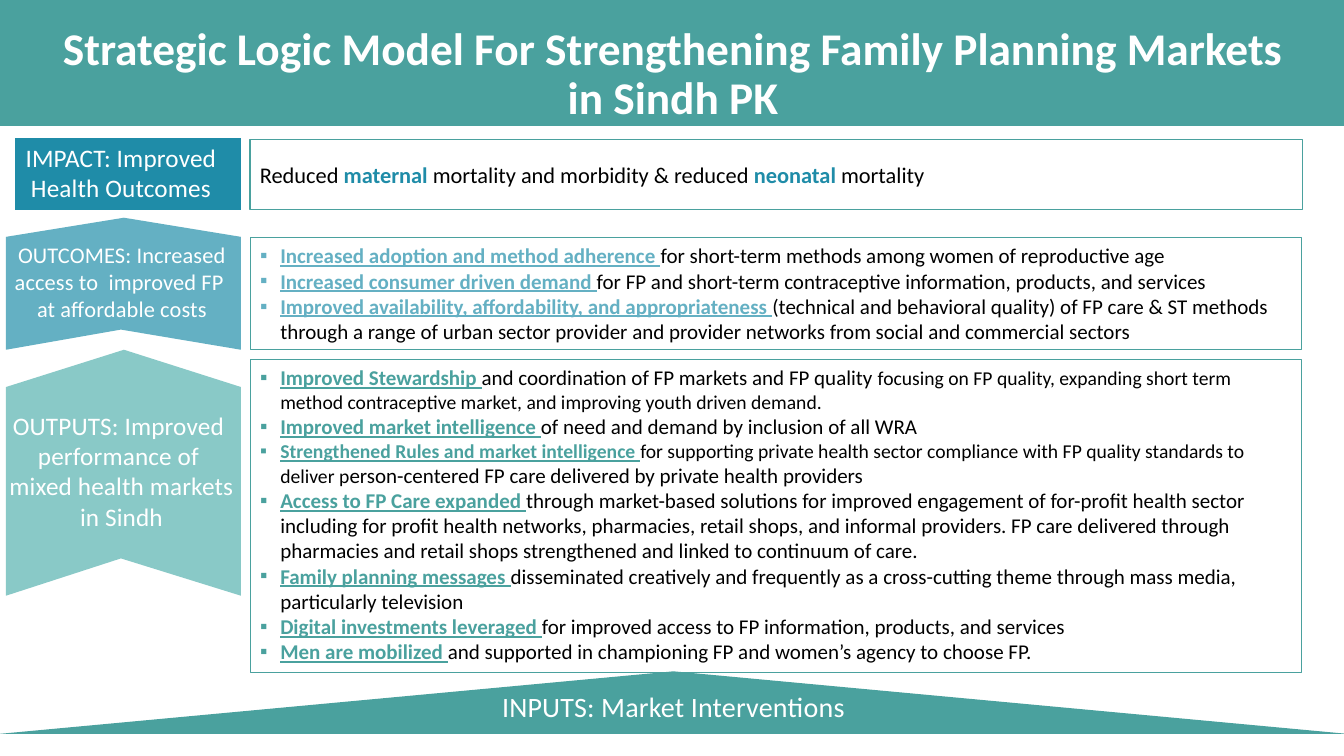
"""Build a one-page logic model for family planning markets."""
from dataclasses import dataclass

from lxml import etree
from pptx import Presentation
from pptx.dml.color import RGBColor
from pptx.enum.shapes import MSO_SHAPE
from pptx.enum.text import MSO_ANCHOR, MSO_AUTO_SIZE, PP_ALIGN
from pptx.oxml.ns import qn
from pptx.util import Inches, Pt

RECTANGLE = MSO_SHAPE.RECTANGLE
TOP, MIDDLE = MSO_ANCHOR.TOP, MSO_ANCHOR.MIDDLE
LEFT, CENTER = PP_ALIGN.LEFT, PP_ALIGN.CENTER
FIXED = MSO_AUTO_SIZE.NONE


@dataclass(frozen=True)
class Theme:
    """Hold the colours, font and type sizes of the page."""
    font: str = "Calibri"
    white: str = "FFFFFF"
    black: str = "000000"
    teal: str = "4AA19E"
    impact: str = "1F8CA8"
    outcomes: str = "64B0C3"
    outputs: str = "89C9C7"
    title: float = 32.4
    inputs: float = 20
    label: float = 18
    body: float = 16
    item: float = 15
    small: float = 14


THEME = Theme()

IMPACT = [("Reduced ", False), ("maternal ", True),
          ("mortality and morbidity & reduced ", False), ("neonatal ", True),
          ("mortality", False)]

OUTCOMES = [
    [("Increased adoption and method adherence ", THEME.item),
     ("for short-term methods among women of reproductive age", THEME.item)],
    [("Increased consumer driven demand ", THEME.item),
     ("for FP and short-term contraceptive information, products, and services", THEME.item)],
    [("Improved availability, affordability, and appropriateness ", THEME.item),
     ("(technical and behavioral quality) of FP care & ST methods through a range of urban "
      "sector provider and provider networks from social and commercial sectors", THEME.item)],
]

OUTPUTS = [
    [("Improved Stewardship ", THEME.item),
     ("and coordination of FP markets and FP quality ", THEME.item),
     ("focusing on FP quality, expanding short term method contraceptive market, "
      "and improving youth driven demand.", THEME.small)],
    [("Improved market intelligence ", THEME.item),
     ("of need and demand by inclusion of all WRA", THEME.item)],
    [("Strengthened Rules and market intelligence ", THEME.small),
     ("for supporting private health sector compliance with FP quality standards "
      "to deliver p", THEME.small),
     ("erson-centered FP care delivered by private health providers", THEME.item)],
    [("Access to FP Care expanded ", THEME.item),
     ("through market-based solutions for improved engagement of for-profit health sector "
      "including for profit health networks, pharmacies, retail shops, and informal providers. "
      "FP care delivered through pharmacies and retail shops strengthened and linked to "
      "continuum of care.", THEME.item)],
    [("Family planning messages ", THEME.item),
     ("disseminated creatively and frequently as a cross-cutting theme through mass media, "
      "particularly television", THEME.item)],
    [("Digital investments leveraged ", THEME.item),
     ("for improved access to FP information, products, and services", THEME.item)],
    [("Men are mobilized ", THEME.item),
     ("and supported in championing FP and women’s agency to choose FP.", THEME.item)],
]


def write_span(para, text, *, size, color=THEME.black, bold=False, underline=False, spacing=0):
    """Add formatted text to a paragraph."""
    span = para.add_run()
    span.text = text
    font = span.font
    font.name, font.size = THEME.font, Pt(size)
    font.bold, font.underline = bold, underline
    font.color.rgb = RGBColor.from_string(color)
    if spacing:
        span._r.get_or_add_rPr().set("spc", str(round(spacing * 100)))


def place(shape, left, top, width, height):
    """Move and size a shape, in inches."""
    shape.left, shape.top = Inches(left), Inches(top)
    shape.width, shape.height = Inches(width), Inches(height)


def set_frame(frame, anchor):
    """Make a text frame wrap at a fixed size."""
    frame.word_wrap = True
    frame.auto_size = FIXED
    frame.vertical_anchor = anchor


def paint(shape, color):
    """Give a shape a plain fill without line or shadow."""
    shape.shadow.inherit = False
    shape.fill.solid()
    shape.fill.fore_color.rgb = RGBColor.from_string(color)
    shape.line.fill.background()


def outline(shape):
    """Give a shape a thin teal frame and no fill."""
    shape.fill.background()
    shape.line.color.rgb = RGBColor.from_string(THEME.teal)
    shape.line.width = Pt(0.75)


def add_header(page, text):
    """Put the title on a full-width band."""
    band = page.shapes.add_shape(RECTANGLE, 0, 0, Inches(13.33), Inches(1.25))
    paint(band, THEME.teal)
    page.shapes.element.insert(2, band.element)
    title = page.shapes.title
    place(title, 0.51, 0.33, 12.33, 0.84)
    set_frame(title.text_frame, MIDDLE)
    para = title.text_frame.paragraphs[0]
    para.alignment, para.line_spacing = CENTER, 0.9
    write_span(para, text, size=THEME.title, color=THEME.white, bold=True)


def add_polygon(page, points, color):
    """Draw a filled outline through points given in inches."""
    start, *others = [(Inches(x), Inches(y)) for x, y in points]
    builder = page.shapes.build_freeform(*start)
    builder.add_line_segments(others)
    paint(builder.convert_to_shape(), color)


def add_chevron(page, top, shoulder, notch, bottom, color):
    """Draw an upward chevron in the left column."""
    left, right = 0.06, 2.39
    add_polygon(page, [(1.23, top), (left, shoulder), (left, bottom), (1.2, notch),
                       (right, bottom), (right, shoulder)], color)


def add_label(page, text, area, size, inset=0.01):
    """Add a centred white label."""
    box = page.shapes.add_textbox(*map(Inches, area))
    frame = box.text_frame
    set_frame(frame, TOP)
    frame.margin_left = frame.margin_right = frame.margin_bottom = 0
    frame.margin_top = Inches(inset)
    para = frame.paragraphs[0]
    para.alignment = CENTER
    write_span(para, text, size=size, color=THEME.white, spacing=0.1)


def add_statement(page, spans, area):
    """Add a framed sentence with highlighted words."""
    box = page.shapes.add_shape(RECTANGLE, *map(Inches, area))
    box.shadow.inherit = False
    outline(box)
    set_frame(box.text_frame, MIDDLE)
    para = box.text_frame.paragraphs[0]
    para.alignment = LEFT
    for text, strong in spans:
        write_span(para, text, size=THEME.body, bold=strong,
                   color=THEME.impact if strong else THEME.black)


def set_bullet(para):
    """Give a paragraph a small square bullet and a hanging indent."""
    properties = para._p.get_or_add_pPr()
    properties.set("marL", str(Inches(0.2)))
    properties.set("indent", str(Inches(-0.2)))
    etree.SubElement(properties, qn("a:buChar")).set("char", "▪")


def fill_list(holder, items, area, color):
    """Fill a framed body placeholder with bullets that have coloured lead words."""
    place(holder, *area)
    outline(holder)
    frame = holder.text_frame
    set_frame(frame, TOP)
    for number, spans in enumerate(items):
        para = frame.add_paragraph() if number else frame.paragraphs[0]
        set_bullet(para)
        para.alignment, para.line_spacing = LEFT, 1.0
        para.space_before = para.space_after = Pt(0)
        for position, (text, size) in enumerate(spans):
            lead = position == 0
            write_span(para, text, size=size, bold=lead, underline=lead,
                       color=color if lead else THEME.black)


def main():
    """Build and save the deck."""
    deck = Presentation()
    deck.slide_width, deck.slide_height = Inches(13.33), Inches(7.5)
    page = deck.slides.add_slide(deck.slide_layouts[3])
    add_header(page, "Strategic Logic Model For Strengthening Family Planning Markets in Sindh PK")
    add_polygon(page, [(2.39, 1.37), (0.15, 1.37), (0.15, 2.08), (2.39, 2.08)], THEME.impact)
    add_chevron(page, 2.16, 2.35, 3.27, 3.47, THEME.outcomes)
    add_chevron(page, 3.47, 3.84, 5.54, 5.91, THEME.outputs)
    add_polygon(page, [(6.68, 6.66), (0, 7.28), (13.36, 7.28)], THEME.teal)
    add_label(page, "IMPACT: Improved Health Outcomes", (0.01, 1.4, 2.38, 0.62), THEME.label)
    add_label(page, "OUTCOMES: Increased access to  improved FP  at affordable costs",
              (0.1, 2.38, 2.22, 0.82), THEME.body)
    add_label(page, "OUTPUTS: Improved  performance of  mixed health markets in Sindh",
              (0.08, 4.06, 2.25, 1.23), THEME.label)
    add_label(page, "INPUTS: Market Interventions", (3.56, 6.82, 6.24, 0.35), THEME.inputs, 0.02)
    add_statement(page, IMPACT, (2.48, 1.38, 10.44, 0.7))
    fill_list(page.placeholders[1], OUTCOMES, (2.48, 2.36, 10.43, 1.11), THEME.outcomes)
    fill_list(page.placeholders[2], OUTPUTS, (2.48, 3.57, 10.43, 3.1), THEME.teal)
    deck.save("out.pptx")


if __name__ == "__main__":
    main()
